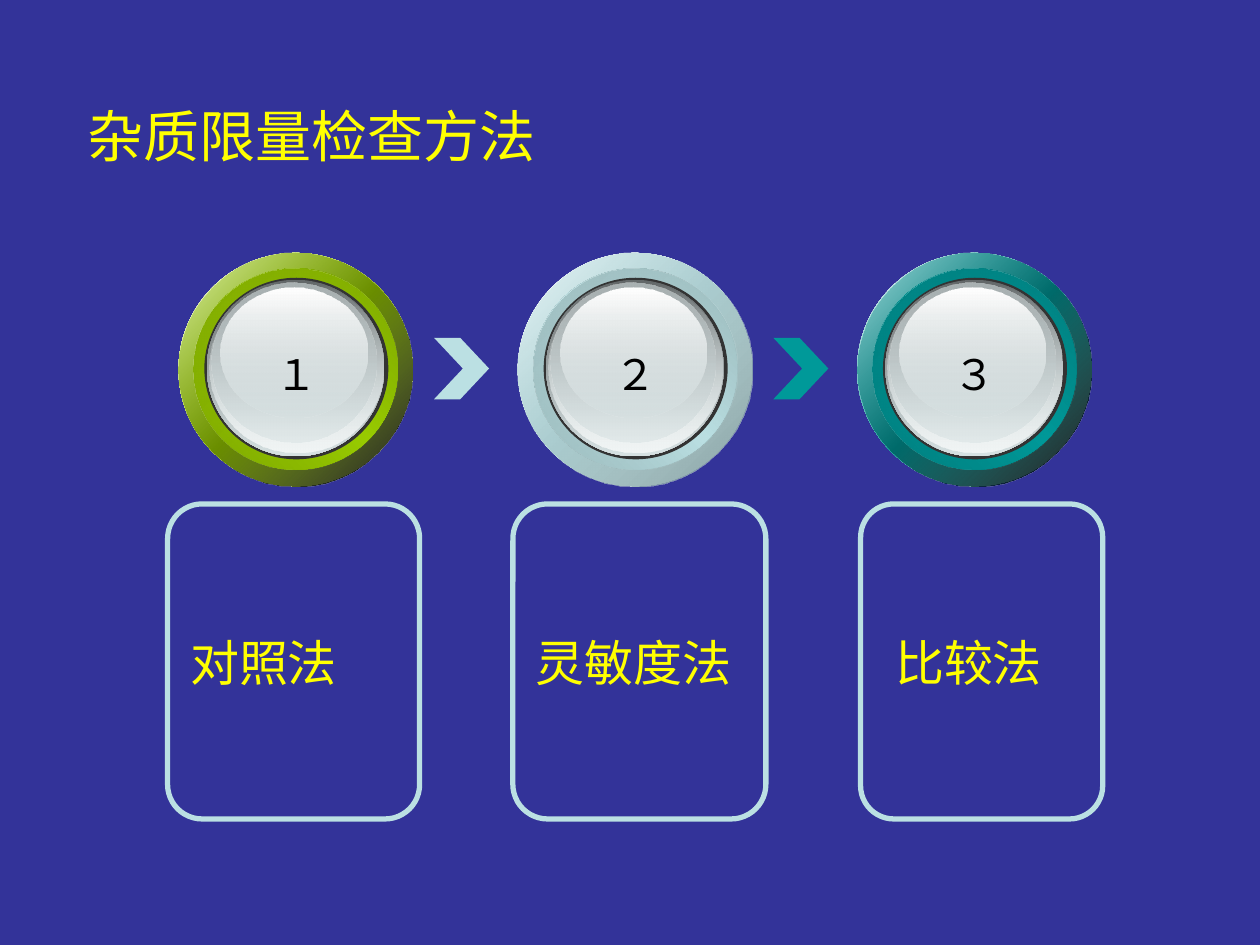
from lxml.etree import SubElement
from pptx import Presentation
from pptx.dml.color import RGBColor as RGB
from pptx.enum.shapes import MSO_SHAPE as SHAPE
from pptx.enum.text import MSO_ANCHOR as ANCHOR, MSO_AUTO_SIZE as AUTO, PP_ALIGN as ALIGN
from pptx.oxml.ns import qn
from pptx.util import Cm, Pt

C = {"bg": "333399", "yellow": "FFFF00", "ice": "BBE0E3", "teal": "009999",
     "green": "99CC00", "white": "FFFFFF", "black": "000000", "rim": "333333",
     "glass": "D6E1E2", "glass_dark": "636869", "glass_mid": "AAB2B3",
     "glass_light": "F1F5F5", "ice_end": "86A0A2", "ice_ring": "8FACAE",
     "ice_glow": "9AB8BA", "teal_ring": "007575", "teal_glow": "007E7E",
     "green_ring": "759C00", "green_glow": "7EA700"}

STEPS = [
    {"number": "１", "label": "对照法", "panel": (3.38, 5.08), "indent": 0,
     "base": "green", "end": ("black", 90), "ring": "green_ring", "glow": "green_glow"},
    {"number": "２", "label": "灵敏度法", "panel": (10.34, 5.1), "indent": 0,
     "base": "ice", "end": ("ice_end", 100), "ring": "ice_ring", "glow": "ice_glow"},
    {"number": "３", "label": "比较法", "panel": (17.35, 4.88), "indent": 0.25,
     "base": "teal", "end": ("black", 90), "ring": "teal_ring", "glow": "teal_glow"},
]
BUTTON_LEFT, BUTTON_TOP, BUTTON_PITCH = 3.6, 5.1, 6.84
PANEL_TOP, PANEL_HEIGHT = 10.16, 6.35


def color(name):
    return RGB.from_string(C[name])


def set_text(sp, text, size=24, name="black", font="Arial", align=ALIGN.LEFT,
             anchor=ANCHOR.MIDDLE, wrap=True):
    tf = sp.text_frame
    tf.word_wrap = wrap
    tf.vertical_anchor = anchor
    p = tf.paragraphs[0]
    p.alignment = align
    r = p.add_run()
    r.text = text
    r.font.size = Pt(size)
    r.font.name = font
    r.font.color.rgb = color(name)
    return tf


def set_gradient(sp, angle, stops):
    sp.fill.gradient()
    grad = sp.fill._fill._gradFill
    stop_list = grad.find(qn("a:gsLst"))
    for old in list(stop_list):
        stop_list.remove(old)
    for i, (name, opacity) in enumerate(stops):
        pos = 100000 * i // (len(stops) - 1)
        gs = SubElement(stop_list, qn("a:gs"), pos=str(pos))
        clr = SubElement(gs, qn("a:srgbClr"), val=C[name])
        if opacity < 100:
            SubElement(clr, qn("a:alpha"), val=str(opacity * 1000))
    grad.find(qn("a:lin")).set("ang", str(angle * 60000))


def add_shape(slide, kind, left, top, width, height, fill=None):
    sp = slide.shapes.add_shape(kind, Cm(left), Cm(top), Cm(width), Cm(height))
    sp.shadow.inherit = False
    sp.line.fill.background()
    if fill:
        sp.fill.solid()
        sp.fill.fore_color.rgb = color(fill)
    else:
        sp.fill.background()
    return sp


def add_title(slide, text, left, top, width, height):
    sp = slide.shapes.title
    sp.left, sp.top, sp.width, sp.height = Cm(left), Cm(top), Cm(width), Cm(height)
    set_text(sp, text, size=32, name="yellow")


def add_panel(slide, step, left, top, width, height):
    sp = add_shape(slide, SHAPE.ROUNDED_RECTANGLE, left, top, width, height)
    sp.adjustments[0] = 0.137
    sp.line.color.rgb = color("ice")
    sp.line.width = Pt(3)
    tf = set_text(sp, step["label"], size=28, name="yellow", font="DejaVu Sans")
    tf.margin_left = Cm(0.25 + step["indent"])


def add_button(slide, step, left, top):
    base, ring, glow = step["base"], step["ring"], step["glow"]
    outer = (0, 0, 4.72, 4.7)
    inner = (0.31, 0.31, 4.11, 4.06)
    layers = [
        (outer, 45, [("white", 100), (base, 100), ("white", 100)]),
        (outer, 45, [(base, 32), step["end"]]),
        (inner, 315, [(ring, 100), (base, 100), (ring, 100)]),
        (inner, 45, [(glow, 100), (base, 0)]),
        ((0.52, 0.5, 3.71, 3.66), None, None),
        ((0.57, 0.54, 3.58, 3.56), 90, [("glass_dark", 100), ("glass", 100)]),
        ((0.62, 0.57, 3.51, 3.45), 90, [("glass", 0), ("glass_light", 100)]),
        ((0.66, 0.6, 3.33, 3.23), 90, [("glass_mid", 100), ("glass", 48)]),
        ((0.85, 0.7, 2.95, 2.62), 90, [("white", 100), ("glass", 38)]),
    ]
    for (dx, dy, width, height), angle, stops in layers:
        sp = add_shape(slide, SHAPE.OVAL, left + dx, top + dy, width, height, "rim")
        if stops:
            set_gradient(sp, angle, stops)
    box = slide.shapes.add_textbox(Cm(left + 1.7), Cm(top + 1.81), Cm(1.35), Cm(1.27))
    tf = set_text(box, step["number"], align=ALIGN.CENTER, anchor=ANCHOR.TOP, wrap=False)
    tf.auto_size = AUTO.SHAPE_TO_FIT_TEXT


def add_arrow(slide, fill, left, top):
    sp = add_shape(slide, SHAPE.CHEVRON, left, top, 1.11, 1.24, fill)
    sp.adjustments[0] = 0.525


def main():
    prs = Presentation()
    prs.slide_width, prs.slide_height = Cm(25.4), Cm(19.05)
    slide = prs.slides.add_slide(prs.slide_layouts[5])
    slide.background.fill.solid()
    slide.background.fill.fore_color.rgb = color("bg")
    add_title(slide, "杂质限量检查方法", 1.5, 1.93, 18.85, 1.57)
    for i, step in enumerate(STEPS):
        left = BUTTON_LEFT + i * BUTTON_PITCH
        panel_left, panel_width = step["panel"]
        add_panel(slide, step, panel_left, PANEL_TOP, panel_width, PANEL_HEIGHT)
        if i:
            add_arrow(slide, step["base"], left - 1.69, BUTTON_TOP + 1.71)
        add_button(slide, step, left, BUTTON_TOP)
    prs.save("out.pptx")


if __name__ == "__main__":
    main()
